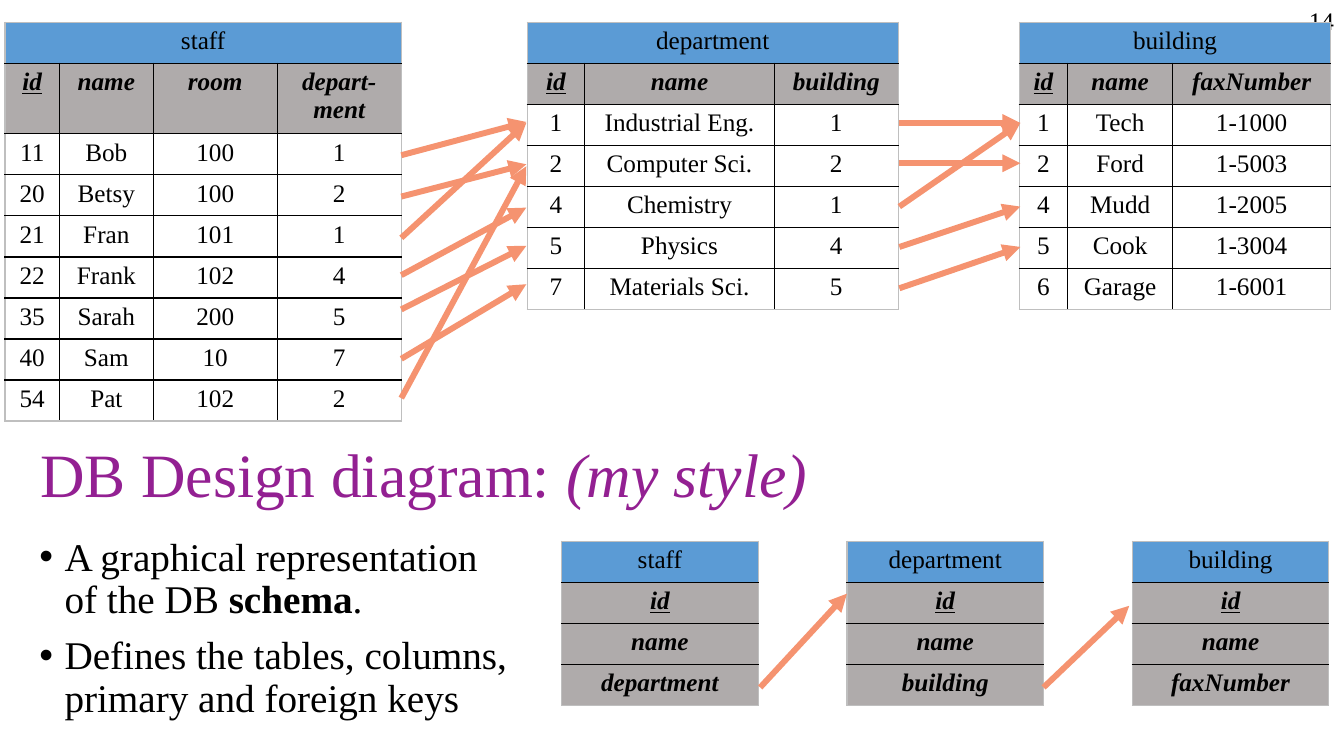
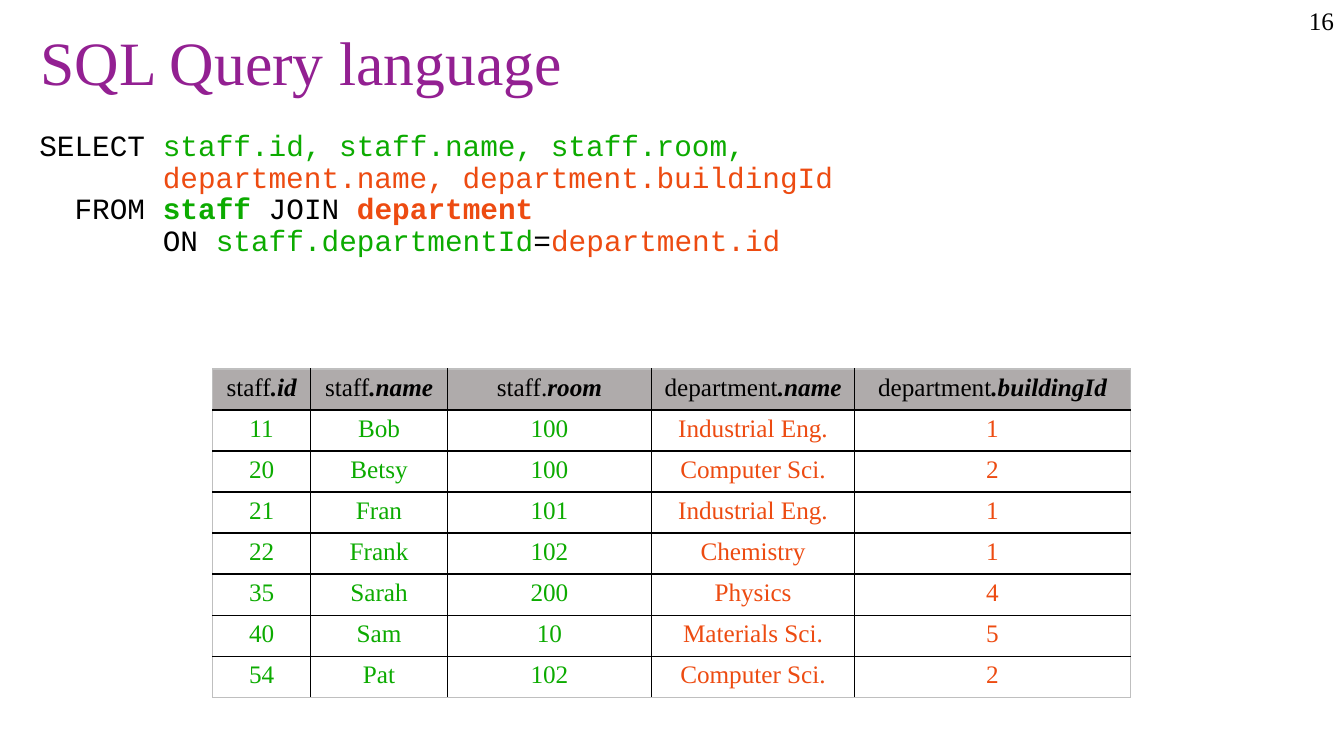
from dataclasses import dataclass

from lxml import etree
from pptx import Presentation
from pptx import util as u
from pptx.dml import color as col
from pptx.enum import shapes, text
from pptx.oxml import ns


@dataclass(frozen=True)
class Theme:
    serif: str = "Times New Roman"
    mono: str = "Courier New"
    ink: str = "000000"
    title: str = "932092"
    head: str = "5B9BD5"
    field: str = "AFABAB"
    edge: str = "BFBFBF"
    arrow: str = "F59370"
    left: str = "0CAB00"
    right: str = "ED4B11"
    big: int = 44
    list: int = 28
    code: int = 21
    small: int = 18
    row: float = 2.85 / 7
    tall: float = 0.65


def child(parent, tag, **attrs):
    return etree.SubElement(parent, ns.qn(tag), attrs)


class Deck:
    def __init__(self, theme):
        self.theme = theme
        self.prs = Presentation()
        self.prs.slide_width = u.Inches(13.33)
        self.prs.slide_height = u.Inches(7.5)
        self.slide = None

    def box(self, *sizes):
        return [u.Inches(size) for size in sizes]

    def fill_par(self, par, runs, size, font=None):
        for words, tint, marks in runs:
            if words == "\n":
                par.add_line_break()
                continue
            run = par.add_run()
            run.text = words
            face = run.font
            face.name = font or self.theme.serif
            face.size = u.Pt(size)
            face.color.rgb = col.RGBColor.from_string(tint)
            face.bold = "b" in marks
            face.italic = "i" in marks
            face.underline = "u" in marks

    def page(self, number):
        self.slide = self.prs.slides.add_slide(self.prs.slide_layouts[1])
        note = self.slide.shapes.add_textbox(*self.box(12.68, 0, 0.65, 0.4))
        note.text_frame.word_wrap = True
        par = note.text_frame.paragraphs[0]
        par.alignment = text.PP_ALIGN.RIGHT
        self.fill_par(par, [(number, self.theme.ink, "")], self.theme.small)

    def place(self, holder, at):
        holder.left, holder.top, holder.width, holder.height = self.box(*at)
        frame = holder.text_frame
        frame.word_wrap = True
        frame.auto_size = text.MSO_AUTO_SIZE.NONE
        return frame

    def title(self, top, runs):
        frame = self.place(self.slide.shapes.title, (0.3, top, 12.73, 0.97))
        frame.vertical_anchor = text.MSO_ANCHOR.MIDDLE
        par = frame.paragraphs[0]
        par.alignment = text.PP_ALIGN.LEFT
        par.line_spacing = 0.9
        self.fill_par(par, [(words, self.theme.title, marks) for words, marks in runs],
                      self.theme.big)

    def body(self, at, pars, size, font=None, bullet=True):
        frame = self.place(self.slide.placeholders[1], at)
        for i, runs in enumerate(pars):
            par = frame.add_paragraph() if i else frame.paragraphs[0]
            props = par._p.get_or_add_pPr()
            indent = u.Inches(0.25) if bullet else 0
            props.set("marL", str(indent))
            props.set("indent", str(-indent))
            if bullet:
                child(props, "a:buFont", typeface="Arial")
                child(props, "a:buChar", char="•")
            else:
                child(props, "a:buNone")
            par.line_spacing = 0.9
            par.space_before = u.Pt(10 if i else 0)
            self.fill_par(par, runs, size, font)

    def border(self, cell, outer):
        props = cell._tc.get_or_add_tcPr()
        for side in "LRTB":
            line = child(props, f"a:ln{side}", w=str(u.Pt(1)))
            tint = self.theme.edge if side in outer else self.theme.ink
            child(child(line, "a:solidFill"), "a:srgbClr", val=tint)

    def table(self, left, top, widths, rows, fills, tall=None):
        last, end = len(rows) - 1, len(widths) - 1
        heights = [self.theme.tall if r == tall else self.theme.row
                   for r in range(len(rows))]
        grid = self.slide.shapes.add_table(
            len(rows), len(widths),
            *self.box(left, top, sum(widths), sum(heights))).table
        grid.first_row = grid.horz_banding = False
        for column, width in zip(grid.columns, widths):
            column.width = u.Inches(width)
        for r, cells in enumerate(rows):
            grid.rows[r].height = u.Inches(heights[r])
            span = len(cells) < len(widths)
            if span:
                grid.cell(r, 0).merge(grid.cell(r, end))
            for c in range(len(widths)):
                cell = grid.cell(r, c)
                sides = (("L", c == 0 or span), ("R", c == end or span),
                         ("T", r == 0), ("B", r == last))
                self.border(cell, [side for side, on in sides if on])
                if r < len(fills):
                    cell.fill.solid()
                    cell.fill.fore_color.rgb = col.RGBColor.from_string(fills[r])
                else:
                    cell.fill.background()
                if c < len(cells):
                    par = cell.text_frame.paragraphs[0]
                    par.alignment = text.PP_ALIGN.CENTER
                    self.fill_par(par, cells[c], self.theme.small)

    def entity(self, left, top, widths, name, fields, data=(), tall=None):
        ink = self.theme.ink
        heads = [[(field, ink, "biu" if field == "id" else "bi")] for field in fields]
        if len(widths) == 1:
            lines = [[head] for head in heads]
        else:
            lines = [heads]
        fills = [self.theme.head] + [self.theme.field] * len(lines)
        cells = [[[(value, ink, "")] for value in row] for row in data]
        self.table(left, top, widths, [[[(name, ink, "")]]] + lines + cells, fills, tall)

    def arrow(self, x1, y1, x2, y2):
        line = self.slide.shapes.add_connector(
            shapes.MSO_CONNECTOR.STRAIGHT, *self.box(x1, y1, x2, y2))
        line.line.color.rgb = col.RGBColor.from_string(self.theme.arrow)
        line.line.width = u.Pt(4.25)
        child(line.line._get_or_add_ln(), "a:tailEnd", type="triangle")
        child(line._element.spPr, "a:effectLst")


STAFF = [
    ("11", "Bob", "100", "1"),
    ("20", "Betsy", "100", "2"),
    ("21", "Fran", "101", "1"),
    ("22", "Frank", "102", "4"),
    ("35", "Sarah", "200", "5"),
    ("40", "Sam", "10", "7"),
    ("54", "Pat", "102", "2"),
]
DEPTS = [
    ("1", "Industrial Eng.", "1"),
    ("2", "Computer Sci.", "2"),
    ("4", "Chemistry", "1"),
    ("5", "Physics", "4"),
    ("7", "Materials Sci.", "5"),
]
HALLS = [
    ("1", "Tech", "1-1000"),
    ("2", "Ford", "1-5003"),
    ("4", "Mudd", "1-2005"),
    ("5", "Cook", "1-3004"),
    ("6", "Garage", "1-6001"),
]


def design(deck):
    ink = deck.theme.ink
    deck.page("14")
    deck.title(4.25, [("DB Design diagram: ", ""), ("(my style)", "i")])
    deck.body((0.29, 5.28, 4.94, 2.09), [
        [("A graphical representation of the DB ", ink, ""),
         ("schema", ink, "b"), (".", ink, "")],
        [("Defines the tables, columns, primary and foreign keys", ink, "")],
    ], deck.theme.list)

    deck.entity(0.05, 0.22, (0.54, 0.93, 1.23, 1.23), "staff",
                ("id", "name", "room", "depart-ment"), STAFF, tall=1)
    deck.entity(5.23, 0.22, (0.57, 1.88, 1.23), "department",
                ("id", "name", "building"), DEPTS)
    deck.entity(10.11, 0.22, (0.48, 1.04, 1.57), "building",
                ("id", "name", "faxNumber"), HALLS)
    for start, end in ((1.54, 1.21), (1.95, 1.63), (2.36, 1.22), (2.73, 2.06),
                       (3.07, 2.44), (3.56, 2.82), (3.95, 1.65)):
        deck.arrow(3.98, start, 5.22, end)
    for start, end in ((1.22, 1.22), (1.62, 1.62), (2.05, 1.22),
                       (2.45, 2.05), (2.86, 2.45)):
        deck.arrow(8.92, start, 10.12, end)

    schema = (("staff", "department"), ("department", "building"),
              ("building", "faxNumber"))
    for i, (name, key) in enumerate(schema):
        deck.entity(5.57 + i * 2.83, 5.37, (1.95,), name, ("id", "name", key))
    deck.arrow(7.54, 6.82, 8.4, 5.89)
    deck.arrow(10.35, 6.82, 11.2, 6.01)


def query(deck):
    look = deck.theme
    ink, left, right = look.ink, look.left, look.right
    stop = ("\n", ink, "")
    deck.page("16")
    deck.title(0.17, [("SQL Query language", "")])
    deck.body((0.29, 1.25, 12.73, 6.12), [[
        ("SELECT ", ink, ""), ("staff.id, staff.name, staff.room,", left, ""), stop,
        ("       department.name, department.buildingId", right, ""), stop,
        ("  FROM ", ink, ""), ("staff ", left, "b"), ("JOIN ", ink, ""),
        ("department", right, "b"), stop,
        ("       ON ", ink, ""), ("staff.departmentId", left, ""),
        ("=", ink, ""), ("department.id", right, ""),
    ]], look.code, look.mono, bullet=False)

    heads = (("staff", ".id"), ("staff", ".name"), ("staff.", "room"),
             ("department", ".name"), ("department", ".buildingId"))
    rows = [[[(name, ink, ""), (field, ink, "bi")] for name, field in heads]]
    depts = {key: rest for key, *rest in DEPTS}
    for *person, key in STAFF:
        rows.append([[(value, left, "")] for value in person]
                    + [[(value, right, "")] for value in depts[key]])
    deck.table(2.11, 3.66, (0.97, 1.36, 2.02, 2.02, 2.73), rows, [look.field])


def main():
    deck = Deck(Theme())
    design(deck)
    query(deck)
    deck.prs.save("out.pptx")


if __name__ == "__main__":
    main()
